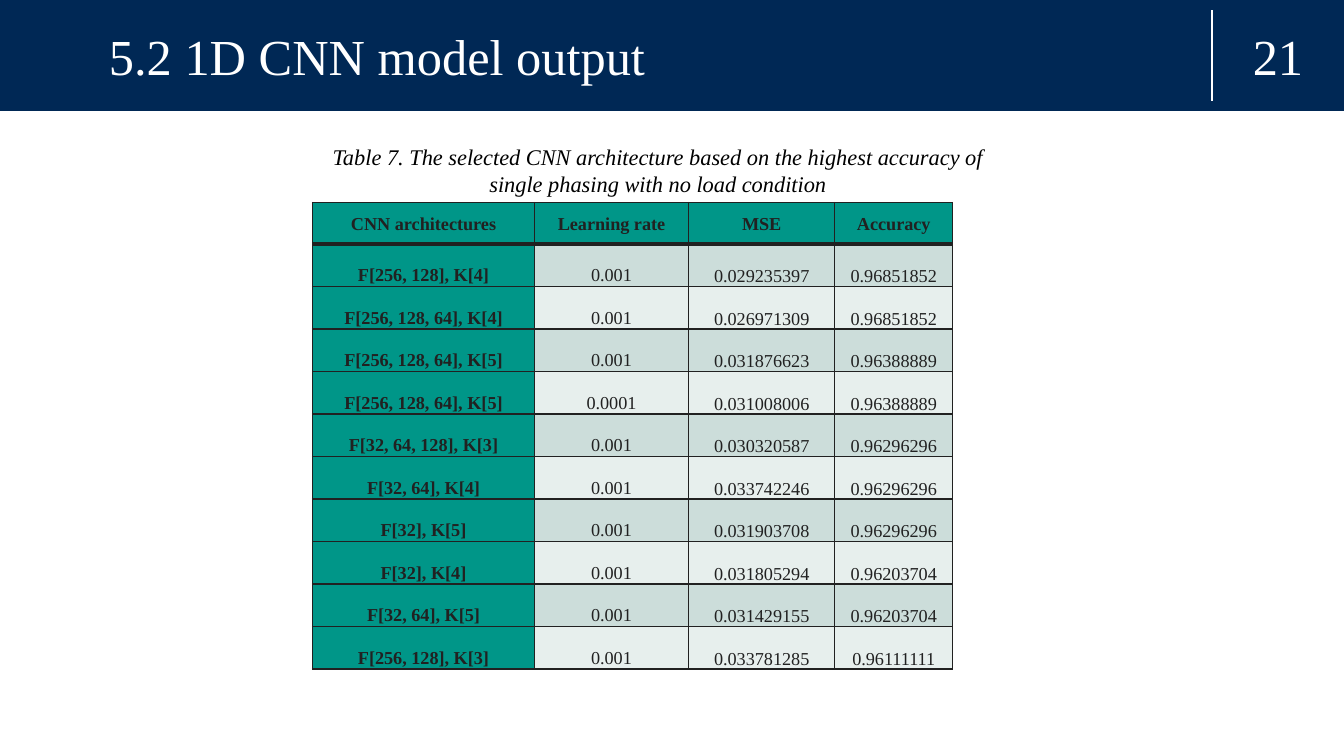
from lxml.etree import SubElement
from pptx import Presentation
from pptx.dml.color import RGBColor
from pptx.enum.shapes import MSO_CONNECTOR as CONNECTOR, MSO_SHAPE as SHAPE
from pptx.enum.text import MSO_ANCHOR as ANCHOR, PP_ALIGN as ALIGN
from pptx.oxml import parse_xml
from pptx.oxml.ns import nsdecls, qn
from pptx.util import Inches, Pt

COLORS = {
    "navy": "002855", "white": "FFFFFF", "black": "000000", "ink": "212121",
    "teal": "009688", "band": "CCDDDA", "pale": "E7EFED",
}
FONT = "Times New Roman"
HEADINGS = ("CNN architectures", "Learning rate", "MSE", "Accuracy")
RESULTS = (
    ("F[256, 128], K[4]", "0.001", "0.029235397", "0.96851852"),
    ("F[256, 128, 64], K[4]", "0.001", "0.026971309", "0.96851852"),
    ("F[256, 128, 64], K[5]", "0.001", "0.031876623", "0.96388889"),
    ("F[256, 128, 64], K[5]", "0.0001", "0.031008006", "0.96388889"),
    ("F[32, 64, 128], K[3]", "0.001", "0.030320587", "0.96296296"),
    ("F[32, 64], K[4]", "0.001", "0.033742246", "0.96296296"),
    ("F[32], K[5]", "0.001", "0.031903708", "0.96296296"),
    ("F[32], K[4]", "0.001", "0.031805294", "0.96203704"),
    ("F[32, 64], K[5]", "0.001", "0.031429155", "0.96203704"),
    ("F[256, 128], K[3]", "0.001", "0.033781285", "0.96111111"),
)
COLUMN_WIDTHS = (2.2, 1.53, 1.45, 1.17)
HEADER_HEIGHT = 0.41


def color(name):
    """Return the named palette colour."""
    return RGBColor.from_string(COLORS[name])


def write(frame, text, size=13, ink="ink", bold=False, italic=False,
          align=ALIGN.CENTER, spacing=None):
    """Write one formatted paragraph into a text frame."""
    frame.word_wrap = True
    paragraph = frame.paragraphs[0]
    paragraph.alignment = align
    if spacing:
        paragraph.line_spacing = spacing
    run = paragraph.add_run()
    run.text = text
    font = run.font
    font.name, font.size, font.bold, font.italic = FONT, Pt(size), bold, italic
    font.color.rgb = color(ink)


def add_label(slide, text, left, top, width, height, anchor=ANCHOR.MIDDLE,
              inset=0.1, pad=0.1, **style):
    """Add a text box with the given anchor and insets."""
    box = slide.shapes.add_textbox(*map(Inches, (left, top, width, height)))
    frame = box.text_frame
    frame.vertical_anchor = anchor
    frame.margin_left, frame.margin_right = Inches(inset), Inches(0.1)
    frame.margin_top = frame.margin_bottom = Inches(pad)
    write(frame, text, **style)


def add_panel(slide, fill, line_width, left, top, width, height):
    """Add a plain rectangle outlined in its own colour."""
    panel = slide.shapes.add_shape(
        SHAPE.RECTANGLE, *map(Inches, (left, top, width, height)))
    panel.shadow.inherit = False
    panel.fill.solid()
    panel.fill.fore_color.rgb = panel.line.color.rgb = color(fill)
    panel.line.width = Pt(line_width)


def add_header(slide, title, number, left, top, width, height):
    """Draw the title band with its divider and page number."""
    add_panel(slide, "navy", 0.75, left, top, width, height)
    divider_x, text_top, text_height = left + width - 1.31, top + 0.1, height - 0.2
    divider = slide.shapes.add_connector(
        CONNECTOR.STRAIGHT, Inches(divider_x), Inches(text_top + text_height),
        Inches(divider_x), Inches(text_top))
    divider.line.color.rgb = color("white")
    divider.line.width = Pt(1.5)
    SubElement(divider._element.spPr, qn("a:effectLst"))
    add_label(slide, number, divider_x, text_top, 1.31, text_height,
              size=36, ink="white")
    add_label(slide, title, left + 0.73, text_top, width - 2.25, text_height,
              inset=0.35, size=36, ink="white", align=ALIGN.LEFT)


def set_borders(cell, top=1, bottom=1):
    """Give a cell dark borders, with chosen widths above and below."""
    widths = {"lnL": 1, "lnR": 1, "lnT": top, "lnB": bottom}
    properties = cell._tc.get_or_add_tcPr()
    for index, (side, width) in enumerate(widths.items()):
        properties.insert(index, parse_xml(
            f'<a:{side} {nsdecls("a")} w="{Pt(width)}"><a:solidFill>'
            f'<a:srgbClr val="{COLORS["ink"]}"/></a:solidFill></a:{side}>'))


def fill_cell(cell, text, row, column):
    """Style and fill one cell according to its row and column."""
    header, key = row == 0, column == 0
    cell.margin_left = cell.margin_right = Inches(0.07)
    cell.margin_top = 0
    cell.margin_bottom = Inches(0.01 if column < 2 and not header else 0)
    cell.vertical_anchor = ANCHOR.MIDDLE if header else ANCHOR.BOTTOM
    cell.fill.solid()
    band = "band" if row % 2 else "pale"
    cell.fill.fore_color.rgb = color("teal" if header or key else band)
    set_borders(cell, top=3 if row == 1 else 1, bottom=3 if header else 1)
    write(cell.text_frame, text, bold=header or key, spacing=1.07)


def add_results(slide, left, top, width, height):
    """Draw the table of architectures and their scores."""
    rows = (HEADINGS, *RESULTS)
    table = slide.shapes.add_table(
        len(rows), len(HEADINGS),
        *map(Inches, (left, top, width, height))).table
    for column, share in zip(table.columns, COLUMN_WIDTHS):
        column.width = Inches(width * share / sum(COLUMN_WIDTHS))
    for row in table.rows:
        row.height = Inches((height - HEADER_HEIGHT) / len(RESULTS))
    table.rows[0].height = Inches(HEADER_HEIGHT)
    for row, values in enumerate(rows):
        for column, text in enumerate(values):
            fill_cell(table.cell(row, column), text, row, column)


def main():
    """Build the slide and save it."""
    deck = Presentation()
    deck.slide_width, deck.slide_height = Inches(13.33), Inches(7.5)
    slide = deck.slides.add_slide(deck.slide_layouts[6])
    slide.background.fill.solid()
    slide.background.fill.fore_color.rgb = color("ink")
    add_panel(slide, "white", 2, 0, 1.1, 13.33, 6.4)
    add_header(slide, "5.2 1D CNN model output", "21", 0, 0, 13.33, 1.1)
    add_results(slide, 3.1, 2.01, 6.35, 4.63)
    add_label(slide, "Table 7. The selected CNN architecture based on the highest "
              "accuracy of single phasing with no load condition",
              3.19, 1.37, 6.67, 0.64, anchor=ANCHOR.TOP, pad=0.05,
              size=16, ink="black", italic=True)
    deck.save("out.pptx")


if __name__ == "__main__":
    main()
